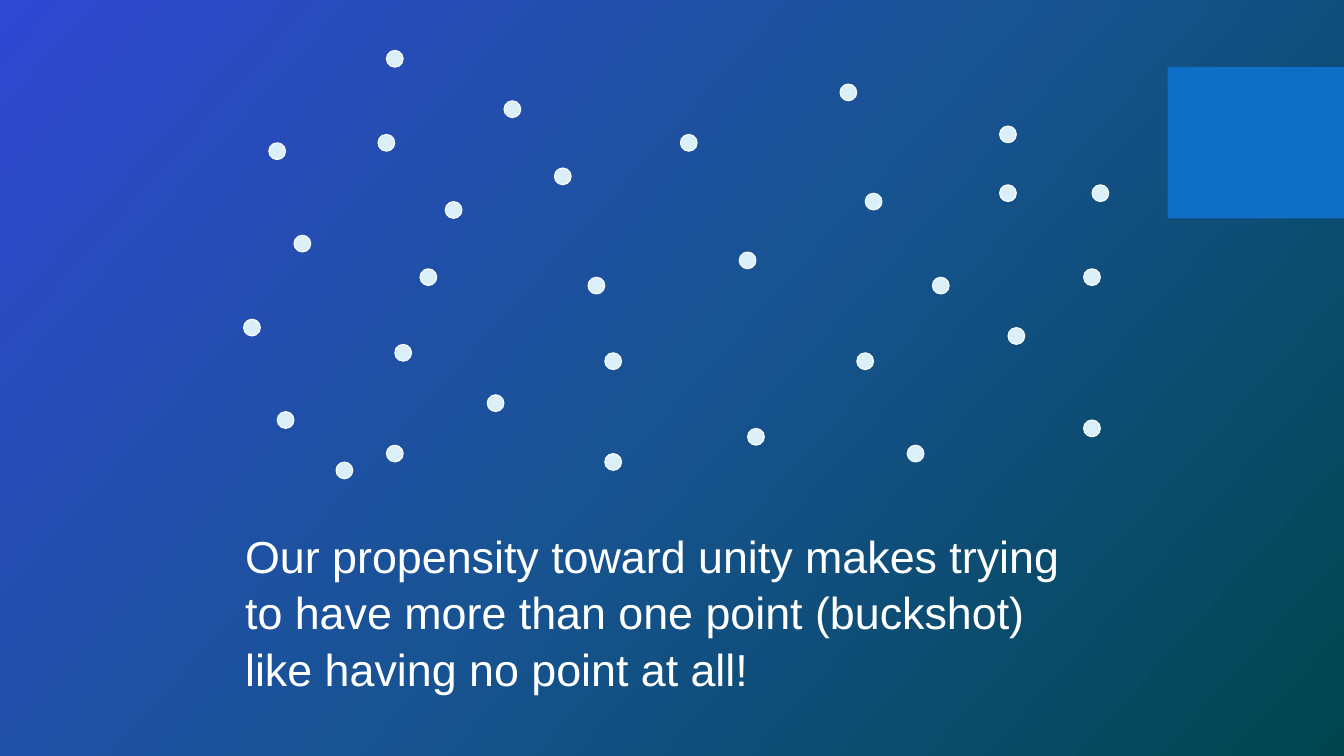
import copy
from dataclasses import dataclass

import pptx
import pptx.dml.color
import pptx.enum.shapes
import pptx.enum.text
import pptx.util

Pt = pptx.util.Pt
RGB = pptx.dml.color.RGBColor.from_string
SHAPES = pptx.enum.shapes.MSO_SHAPE


@dataclass(frozen=True)
class Theme:
    gradient: tuple = ((0, "3148D3"), (0.5, "185393"), (1, "00464E"))
    gradient_angle: int = 318
    block: str = "0F6FC6"
    pellet: str = "DBEFF9"
    white: str = "FFFFFF"
    font: str = "Arial"
    size: int = 32
    outline: float = 0.75
    line_spacing: float = 1.05


@dataclass(frozen=True)
class Pellet:
    col: int
    row: int


THEME = Theme()
GRID = 6
DIAMETER = 12
PELLETS = [Pellet(col, row) for col, row in (
    (46, 53), (72, 42), (72, 54), (33, 49), (89, 51), (88, 30), (47, 41),
    (46, 6), (119, 22), (103, 23), (100, 10), (102, 42), (45, 16), (60, 12),
    (35, 28), (32, 17), (53, 24), (81, 16), (66, 20), (50, 32), (58, 47),
    (70, 33), (108, 53), (29, 38), (40, 55), (119, 15), (111, 33), (120, 39),
    (130, 22), (129, 32), (129, 50),
)]
MESSAGE = (
    "Our propensity toward unity makes trying\n"
    "to have more than one point (buckshot)\n"
    "like having no point at all!"
)


def paint_background(s: pptx.slide.Slide) -> None:
    fill = s.background.fill
    fill.gradient()
    fill.gradient_angle = THEME.gradient_angle
    stops = s._element.xpath(".//a:gsLst")[0]
    stops.insert(1, copy.deepcopy(stops[0]))
    for stop, (position, color) in zip(fill.gradient_stops, THEME.gradient):
        stop.position = position
        stop.color.rgb = RGB(color)


def draw_block(s: pptx.slide.Slide) -> None:
    sp = s.shapes.add_shape(SHAPES.RECTANGLE, Pt(834), Pt(48), Pt(126), Pt(108))
    sp.shadow.inherit = False
    sp.fill.solid()
    sp.fill.fore_color.rgb = RGB(THEME.block)
    sp.line.fill.background()


def draw_pellet(s: pptx.slide.Slide, pellet: Pellet) -> None:
    sp = s.shapes.add_shape(
        SHAPES.OVAL, Pt(pellet.col * GRID), Pt(pellet.row * GRID),
        Pt(DIAMETER), Pt(DIAMETER))
    sp.shadow.inherit = False
    sp.fill.solid()
    sp.fill.fore_color.rgb = RGB(THEME.pellet)
    sp.line.color.rgb = RGB(THEME.white)
    sp.line.width = Pt(THEME.outline)


def write_message(s: pptx.slide.Slide) -> None:
    tf = s.shapes.add_textbox(Pt(168), Pt(372), Pt(600.5), Pt(124)).text_frame
    tf.word_wrap = False
    tf.auto_size = pptx.enum.text.MSO_AUTO_SIZE.SHAPE_TO_FIT_TEXT
    tf.text = MESSAGE
    for p in tf.paragraphs:
        p.line_spacing = THEME.line_spacing
        for r in p.runs:
            r.font.name = THEME.font
            r.font.size = Pt(THEME.size)
            r.font.color.rgb = RGB(THEME.white)


def main() -> None:
    prs = pptx.Presentation()
    prs.slide_width, prs.slide_height = Pt(960), Pt(540)
    s = prs.slides.add_slide(prs.slide_layouts[6])
    paint_background(s)
    draw_block(s)
    for pellet in PELLETS:
        draw_pellet(s, pellet)
    write_message(s)
    prs.save("out.pptx")


if __name__ == "__main__":
    main()
